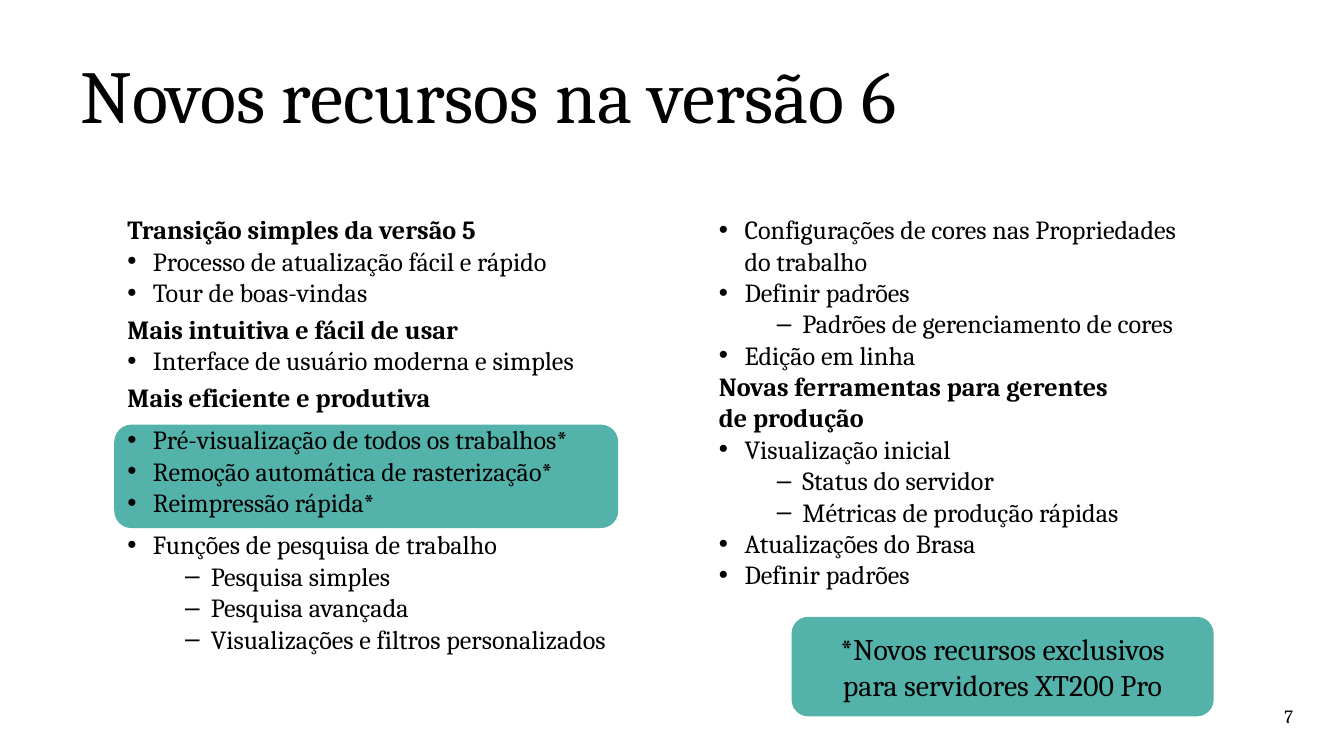
import pptx
import pptx.util
import pptx.dml.color
import pptx.enum.shapes
import pptx.enum.text
import pptx.oxml.ns
from lxml import etree

Inches = pptx.util.Inches
Pt = pptx.util.Pt
Align = pptx.enum.text.PP_ALIGN
Anchor = pptx.enum.text.MSO_ANCHOR
TEAL = pptx.dml.color.RGBColor(0x53, 0xB3, 0xAB)
INK = pptx.dml.color.RGBColor(0x00, 0x01, 0x00)
BLACK = pptx.dml.color.RGBColor(0, 0, 0)
FONT = "Cambria"
BULLET_FONT = "Arial"

TITLE = "Novos recursos na versão 6"
PAGE_NUMBER = "7"
NOTE = "*Novos recursos exclusivos para servidores XT200 Pro"
FEATURES = [
    ("heading", "Transição simples da versão 5", 0),
    ("item", "Processo de atualização fácil e rápido", 0),
    ("item", "Tour de boas-vindas", 0),
    ("heading", "Mais intuitiva e fácil de usar", 2.8),
    ("item", "Interface de usuário moderna e simples", 0),
    ("heading", "Mais eficiente e produtiva", 2.8),
    ("item", "Pré-visualização de todos os trabalhos*", 6),
    ("item", "Remoção automática de rasterização*", 0),
    ("item", "Reimpressão rápida*", 0),
    ("item", "Funções de pesquisa de trabalho", 6),
    ("subitem", "Pesquisa simples", 0),
    ("subitem", "Pesquisa avançada", 0),
    ("subitem", "Visualizações e filtros personalizados", 0),
    ("item", "Configurações de cores nas Propriedades \vdo trabalho", 0),
    ("item", "Definir padrões", 0),
    ("subitem", "Padrões de gerenciamento de cores", 0),
    ("item", "Edição em linha", 0),
    ("heading", "Novas ferramentas para gerentes \vde produção", 0),
    ("item", "Visualização inicial", 0),
    ("subitem", "Status do servidor", 0),
    ("subitem", "Métricas de produção rápidas", 0),
    ("item", "Atualizações do Brasa", 0),
    ("item", "Definir padrões", 0),
]
BULLETS = {"item": ("•", 0, 0.19), "subitem": ("–", 1, 0.62)}
HANGING = 0.19


def set_font(paragraph, size, color=INK, bold=False):
    paragraph.font.name = FONT
    paragraph.font.size = Pt(size)
    paragraph.font.color.rgb = color
    paragraph.font.bold = bold


def add_bullet(paragraph, kind):
    character, level, margin = BULLETS[kind]
    paragraph.level = level
    properties = paragraph._p.get_or_add_pPr()
    properties.set("marL", str(Inches(margin)))
    properties.set("indent", str(-Inches(HANGING)))
    for tag, name, value in (("a:buFont", "typeface", BULLET_FONT),
                             ("a:buChar", "char", character)):
        etree.SubElement(properties, pptx.oxml.ns.qn(tag)).set(name, value)


def add_text_box(slide, box, anchor=Anchor.TOP):
    frame = slide.shapes.add_textbox(*map(Inches, box)).text_frame
    frame.word_wrap = True
    frame.vertical_anchor = anchor
    return frame


def add_panel(slide, box):
    panel = slide.shapes.add_shape(
        pptx.enum.shapes.MSO_SHAPE.ROUNDED_RECTANGLE, *map(Inches, box))
    panel.shadow.inherit = False
    panel.fill.solid()
    panel.fill.fore_color.rgb = TEAL
    panel.line.fill.background()
    return panel.text_frame


def write_line(frame, text, size, color=INK, alignment=Align.LEFT):
    paragraph = frame.paragraphs[0]
    paragraph.text = text
    paragraph.alignment = alignment
    set_font(paragraph, size, color)


def write_features(frame):
    columns = frame._txBody.bodyPr
    columns.set("numCol", "2")
    columns.set("spcCol", "0")
    for index, (kind, text, space) in enumerate(FEATURES):
        paragraph = frame.add_paragraph() if index else frame.paragraphs[0]
        paragraph.text = text
        if kind in BULLETS:
            add_bullet(paragraph, kind)
        paragraph.space_before = Pt(space)
        set_font(paragraph, 14, bold=kind == "heading")


def main():
    presentation = pptx.Presentation()
    presentation.slide_width = Inches(10)
    presentation.slide_height = presentation.slide_width * 9 // 16
    slide = presentation.slides.add_slide(presentation.slide_layouts[6])

    add_panel(slide, (0.85, 3.16, 3.75, 0.77))
    title = add_text_box(slide, (0.5, 0.23, 9, 0.94), Anchor.MIDDLE)
    write_line(title, TITLE, 40)
    number = add_text_box(slide, (8.89, 5.18, 0.83, 0.3), Anchor.MIDDLE)
    write_line(number, PAGE_NUMBER, 10, BLACK, Align.RIGHT)
    write_features(add_text_box(slide, (0.85, 1.54, 9, 3.57)))
    note = add_panel(slide, (5.89, 4.59, 3.14, 0.74))
    note.word_wrap = True
    note.margin_left = note.margin_right = Inches(0.2)
    note.vertical_anchor = Anchor.MIDDLE
    write_line(note, NOTE, 16, alignment=Align.CENTER)

    presentation.save("out.pptx")


if __name__ == "__main__":
    main()
